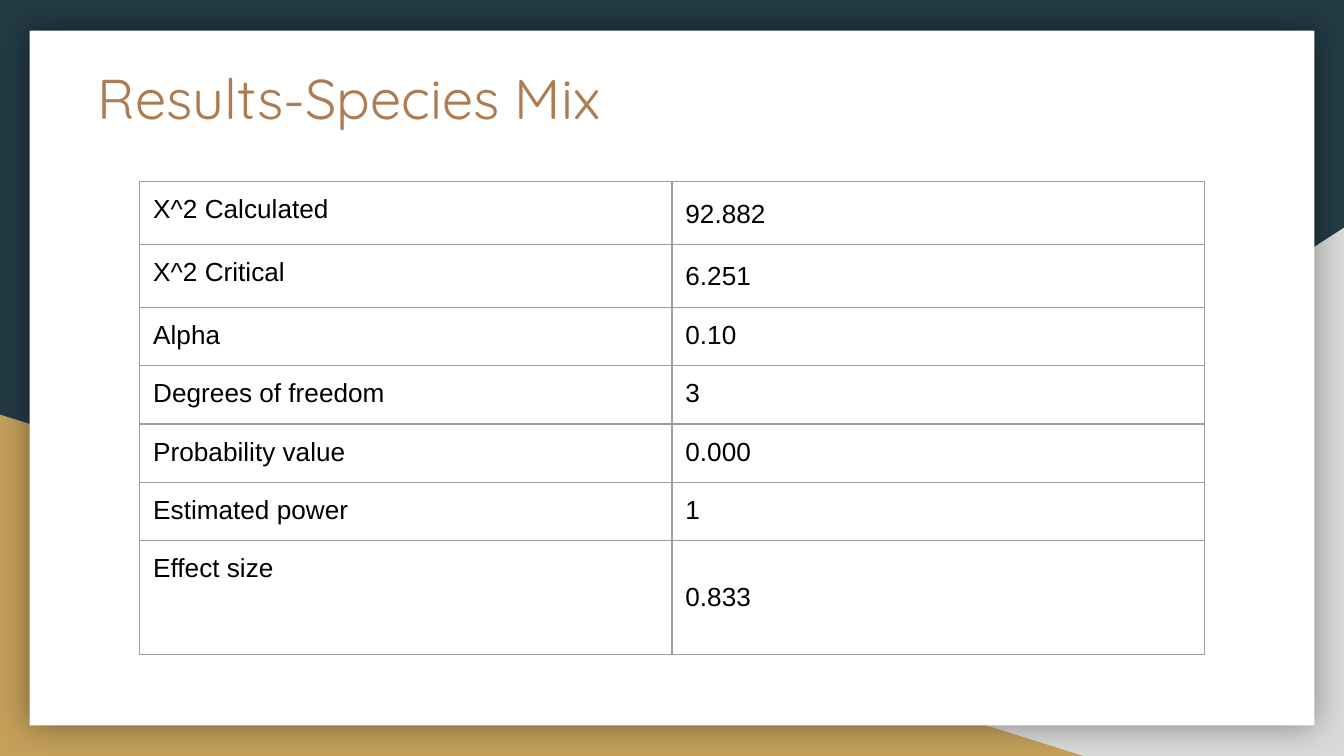
from lxml import etree
from pptx import Presentation
from pptx import util as u
from pptx.dml.color import RGBColor
from pptx.enum import shapes, text
from pptx.oxml.ns import qn

WIDTH = 10
HEIGHT = WIDTH * 9 / 16
COLORS = {"night": "233A44", "gray": "D9D9D9", "gold": "C4A15A", "paper": "FFFFFF",
          "title": "AF7B51", "ink": "000000", "border": "9E9E9E"}
TITLE = "Results-Species Mix"
RESULTS = [
    ("X^2 Calculated", "92.882"),
    ("X^2 Critical", "6.251"),
    ("Alpha", "0.10"),
    ("Degrees of freedom", "3"),
    ("Probability value", "0.000"),
    ("Estimated power", "1"),
    ("Effect size", "0.833"),
]
ROW_HEIGHTS = [0.45] * 2 + [0.42] * 4 + [0.85]
SPACED_ROWS = 2
COLUMN_WIDTH = 3.96
TABLE_TOP = 1.35
FRAME_SIDE = 3.28
INSET = u.Inches(0.1)


def color(name):
    return RGBColor.from_string(COLORS[name])


def add_panel(page, kind, left, top, width, height, fill):
    panel = page.shapes.add_shape(kind, *map(u.Inches, (left, top, width, height)))
    panel.shadow.inherit = False
    panel.fill.solid()
    panel.fill.fore_color.rgb = color(fill)
    panel.line.fill.background()
    return panel


def add_glow(panel):
    effects = panel._element.spPr.find(qn("a:effectLst"))
    shadow = etree.SubElement(effects, qn("a:outerShdw"), blurRad=str(u.Pt(18)),
                              dist="0", dir="0", algn="ctr", rotWithShape="0")
    shade = etree.SubElement(shadow, qn("a:srgbClr"), val=COLORS["ink"])
    etree.SubElement(shade, qn("a:alpha"), val="40000")


def add_borders(cell):
    properties = cell._tc.get_or_add_tcPr()
    for position, side in enumerate(("a:lnL", "a:lnR", "a:lnT", "a:lnB")):
        line = etree.Element(qn(side), w=str(u.Pt(0.75)))
        fill = etree.SubElement(line, qn("a:solidFill"))
        etree.SubElement(fill, qn("a:srgbClr"), val=COLORS["border"])
        properties.insert(position, line)


def style(paragraph, name, size, ink):
    paragraph.font.name = name
    paragraph.font.size = u.Pt(size)
    paragraph.font.color.rgb = color(ink)


def set_insets(holder):
    holder.margin_left = holder.margin_right = INSET
    holder.margin_top = holder.margin_bottom = INSET


def add_backdrop(page):
    page.background.fill.solid()
    page.background.fill.fore_color.rgb = color("night")
    triangle = shapes.MSO_SHAPE.RIGHT_TRIANGLE
    right = add_panel(page, triangle, 3.92, HEIGHT - 3.93, 6.08, 3.93, "gray")
    right._element.spPr.xfrm.set("flipH", "1")
    add_panel(page, triangle, 0, HEIGHT - 2.54, 8.06, 2.54, "gold")
    width, height = 9.56, 5.17
    paper = add_panel(page, shapes.MSO_SHAPE.RECTANGLE, (WIDTH - width) / 2,
                      (HEIGHT - height) / 2, width, height, "paper")
    add_glow(paper)


def add_title(page):
    box = page.shapes.add_textbox(*map(u.Inches, (0.63, 0.37, 8.21, 0.75)))
    frame = box.text_frame
    frame.word_wrap = True
    frame.vertical_anchor = text.MSO_ANCHOR.TOP
    set_insets(frame)
    para = frame.paragraphs[0]
    para.text = TITLE
    style(para, "Quicksand", 30, "title")


def add_results(page):
    columns = len(RESULTS[0])
    width = columns * COLUMN_WIDTH
    frame = page.shapes.add_table(len(RESULTS), columns, u.Inches((WIDTH - width) / 2),
                                  u.Inches(TABLE_TOP), u.Inches(width),
                                  u.Inches(sum(ROW_HEIGHTS)))
    table = frame.table
    table.first_row = table.horz_banding = False
    for column in table.columns:
        column.width = u.Inches(COLUMN_WIDTH)
    for row, height in enumerate(ROW_HEIGHTS):
        table.rows[row].height = u.Inches(height)
        for column, words in enumerate(RESULTS[row]):
            cell = table.cell(row, column)
            cell.fill.background()
            set_insets(cell)
            add_borders(cell)
            para = cell.text_frame.paragraphs[0]
            para.text = words
            style(para, "Arial", 14, "ink")
            if column == 1 and row < SPACED_ROWS:
                para.line_spacing = 1.15
    table.cell(len(RESULTS) - 1, 1).vertical_anchor = text.MSO_ANCHOR.MIDDLE
    frame.width = frame.height = u.Inches(FRAME_SIDE)


def main():
    deck = Presentation()
    deck.slide_width, deck.slide_height = u.Inches(WIDTH), u.Inches(HEIGHT)
    page = deck.slides.add_slide(deck.slide_layouts[6])
    add_backdrop(page)
    add_title(page)
    add_results(page)
    deck.save("out.pptx")


if __name__ == "__main__":
    main()
